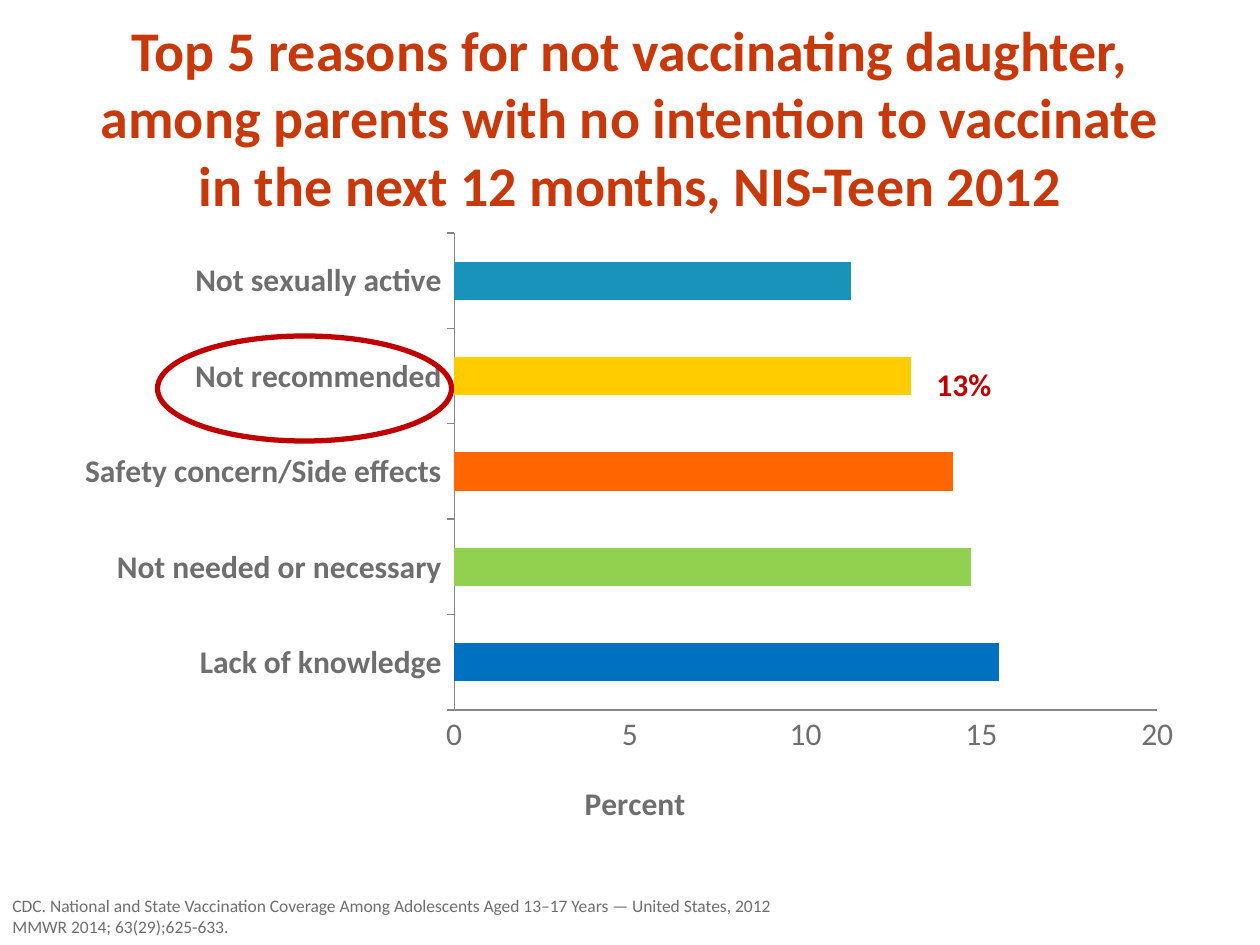
from dataclasses import dataclass

from lxml.etree import SubElement
from pptx import Presentation
from pptx.chart.data import CategoryChartData
from pptx.dml.color import RGBColor
from pptx.enum.chart import XL_CHART_TYPE, XL_TICK_MARK
from pptx.enum.shapes import MSO_SHAPE
from pptx.enum.text import MSO_ANCHOR, MSO_AUTO_SIZE, PP_ALIGN
from pptx.oxml.ns import qn
from pptx.util import Pt

GRAY = "6E6E6E"
RED = "C00000"
AXIS_GRAY = "868686"


@dataclass
class Area:
    left: float
    top: float
    width: float
    height: float

    def lengths(self):
        return Pt(self.left), Pt(self.top), Pt(self.width), Pt(self.height)


@dataclass
class Reason:
    label: str
    percent: float
    color: str


@dataclass
class Caption:
    area: Area
    lines: list[str]
    size: float
    color: str
    bold: bool = False


REASONS = [
    Reason("Lack of knowledge", 15.5, "0070C0"),
    Reason("Not needed or necessary", 14.7, "92D050"),
    Reason("Safety concern/Side effects", 14.2, "FF6600"),
    Reason("Not recommended", 13, "FFCC00"),
    Reason("Not sexually active", 11.3, "1993B9"),
]
CAPTIONS = [
    Caption(
        Area(0, 508, 522, 32),
        [
            "CDC. National and State Vaccination Coverage Among Adolescents "
            "Aged 13–17 Years — United States, 2012",
            "MMWR 2014; 63(29);625-633.",
        ],
        10,
        GRAY,
    ),
    Caption(Area(528, 205, 60, 29), ["13%"], 18, RED, True),
]


def rgb(color: str) -> RGBColor:
    return RGBColor.from_string(color)


def style_font(font, size: float, color: str, bold: bool = False) -> None:
    font.name = "Calibri"
    font.size = Pt(size)
    font.bold = bold
    font.color.rgb = rgb(color)


def add_title(slide, text: str) -> None:
    title = slide.shapes.title
    title.left, title.top, title.width, title.height = Area(36, 21.6, 648, 90).lengths()
    frame = title.text_frame
    frame.text = text
    frame.word_wrap = True
    frame.auto_size = MSO_AUTO_SIZE.NONE
    frame.vertical_anchor = MSO_ANCHOR.MIDDLE
    para = frame.paragraphs[0]
    para.alignment = PP_ALIGN.CENTER
    style_font(para.font, 32, "C7380B", True)


def set_layout(parent, index: int, settings: dict) -> None:
    for old_layout in parent.findall(qn("c:layout")):
        parent.remove(old_layout)
    layout = SubElement(parent, qn("c:layout"))
    parent.insert(index, layout)
    manual = SubElement(layout, qn("c:manualLayout"))
    for name, value in settings.items():
        SubElement(manual, qn(f"c:{name}")).set("val", str(value))


def add_reasons_chart(slide, reasons: list[Reason]) -> None:
    data = CategoryChartData()
    data.categories = [reason.label for reason in reasons]
    data.add_series("Series 1", [reason.percent for reason in reasons])
    area = Area(36, 126, 648, 356.4)
    chart = slide.shapes.add_chart(
        XL_CHART_TYPE.BAR_CLUSTERED, *area.lengths(), data
    ).chart
    chart.has_legend = False
    chart.has_title = False
    style_font(chart.font, 18, "000000")

    plot = chart.plots[0]
    plot.gap_width = 150
    plot.vary_by_categories = False
    series = plot.series[0]
    series.format.fill.solid()
    series.format.fill.fore_color.rgb = rgb("DDDDDD")
    for index, reason in enumerate(reasons):
        fill = series.points[index].format.fill
        fill.solid()
        fill.fore_color.rgb = rgb(reason.color)

    for axis, tick, bold in (
        (chart.category_axis, XL_TICK_MARK.OUTSIDE, True),
        (chart.value_axis, XL_TICK_MARK.NONE, False),
    ):
        axis.major_tick_mark = tick
        axis.minor_tick_mark = XL_TICK_MARK.NONE
        axis.has_major_gridlines = False
        axis.format.line.color.rgb = rgb(AXIS_GRAY)
        axis.format.line.width = Pt(0.75)
        style_font(axis.tick_labels.font, 18, GRAY, bold)

    value_axis = chart.value_axis
    value_axis.minimum_scale = 0
    value_axis.maximum_scale = 20
    value_axis.major_unit = 5
    frame = value_axis.axis_title.text_frame
    frame.text = "Percent"
    style_font(frame.paragraphs[0].font, 18, GRAY, True)

    edges = {"xMode": "edge", "yMode": "edge"}
    plot_area = chart.element.find(".//" + qn("c:plotArea"))
    set_layout(
        plot_area,
        0,
        {"layoutTarget": "inner", **edges, "x": 0.345, "y": 0.02, "w": 0.62, "h": 0.765},
    )
    axis_title = plot_area.find(".//" + qn("c:title"))
    set_layout(axis_title, 1, {**edges, "x": 0.455, "y": 0.89})


def add_caption(slide, caption: Caption) -> None:
    box = slide.shapes.add_textbox(*caption.area.lengths())
    frame = box.text_frame
    frame.word_wrap = True
    frame.auto_size = MSO_AUTO_SIZE.SHAPE_TO_FIT_TEXT
    frame.text = "\n".join(caption.lines)
    for para in frame.paragraphs:
        style_font(para.font, caption.size, caption.color, caption.bold)


def add_highlight(slide, area: Area) -> None:
    ellipse = slide.shapes.add_shape(MSO_SHAPE.OVAL, *area.lengths())
    ellipse.shadow.inherit = False
    ellipse.fill.background()
    ellipse.line.color.rgb = rgb(RED)
    ellipse.line.width = Pt(3)


def main() -> None:
    deck = Presentation()
    deck.slide_width, deck.slide_height = Pt(720), Pt(540)
    slide = deck.slides.add_slide(deck.slide_layouts[5])
    add_title(
        slide,
        "Top 5 reasons for not vaccinating daughter, among parents with "
        "no intention to vaccinate in the next 12 months, NIS-Teen 2012",
    )
    add_reasons_chart(slide, REASONS)
    source, percent = CAPTIONS
    add_caption(slide, source)
    add_highlight(slide, Area(90, 192, 168, 60))
    add_caption(slide, percent)
    deck.save("out.pptx")


if __name__ == "__main__":
    main()
